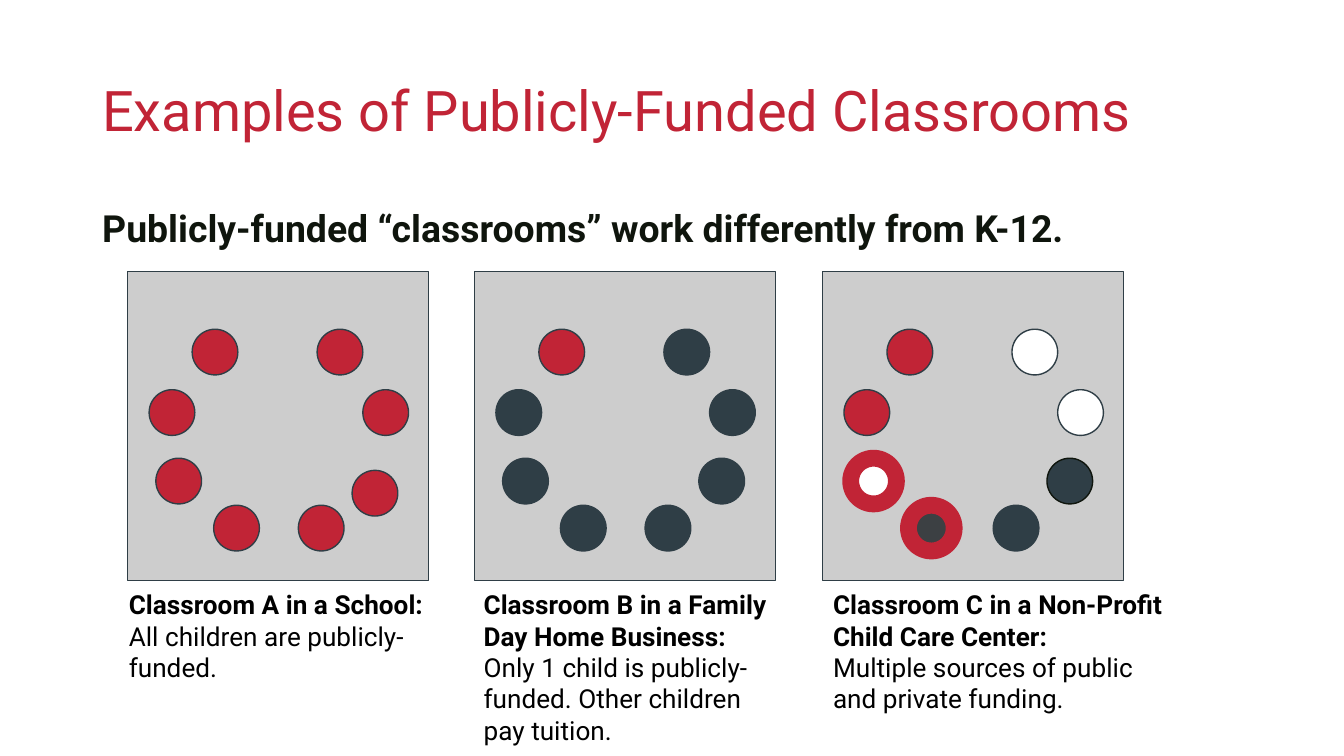
import pptx
import pptx.util
import pptx.dml.color
import pptx.enum.shapes
import pptx.enum.text

Inches = pptx.util.Inches
Pt = pptx.util.Pt

RED, NAVY, WHITE, GRAY = "C12436", "2F3E46", "FFFFFF", "CDCDCD"
CHARCOAL, INK, BLACK = "3C4043", "0F150D", "000000"
ROOM_TOP, ROOM_WIDTH, ROOM_HEIGHT = 2.02, 2.24, 2.3
SEAT_SIZE = 0.34
CAPTION_TOP = 4.28

# Seat offsets from the room corner, clockwise from the upper left.
SEATS = [(0.48, 0.43), (1.41, 0.43), (1.75, 0.88), (1.67, 1.39),
         (1.27, 1.74), (0.64, 1.74), (0.21, 1.39), (0.16, 0.88)]
LOW_RIGHT = 3

# Each child is (fill, line colour, line width).
PUBLIC = (RED, NAVY, 0.75)
TUITION = (NAVY, NAVY, 0.75)
TUITION_DARK_EDGE = (NAVY, INK, 0.75)
OTHER = (WHITE, NAVY, 0.75)
PUBLIC_AND_OTHER = (WHITE, RED, 9)
PUBLIC_AND_TUITION = (CHARCOAL, RED, 9)

# Room left, children, extra drop of the low right seat,
# caption left, width, height, heading and detail.
CLASSROOMS = [
    (0.95, [PUBLIC] * 8, 0.09, 0.86, 2.42, 0.91,
     "Classroom A in a School:", "All children are publicly-funded."),
    (3.53, [PUBLIC] + [TUITION] * 7, 0, 3.5, 2.42, 1.38,
     "Classroom B in a Family Day Home Business:",
     "Only 1 child is publicly-funded. Other children pay tuition."),
    (6.12, [PUBLIC, OTHER, OTHER, TUITION_DARK_EDGE, TUITION,
            PUBLIC_AND_TUITION, PUBLIC_AND_OTHER, PUBLIC], 0, 6.1, 2.8, 1.14,
     "Classroom C in a Non-Profit Child Care Center:",
     "Multiple sources of public and private funding."),
]


def color(hex_value):
    return pptx.dml.color.RGBColor.from_string(hex_value)


def add_outlined(page, kind, left, top, width, height, fill, line, weight):
    shape = page.shapes.add_shape(kind, Inches(left), Inches(top),
                                  Inches(width), Inches(height))
    shape.shadow.inherit = False
    shape.fill.solid()
    shape.fill.fore_color.rgb = color(fill)
    shape.line.color.rgb = color(line)
    shape.line.width = Pt(weight)


def add_text(page, left, top, width, height, lines, size, text_color,
             insets=(0.07, 0.04), middle=False, spacing=None):
    """Add a text box; each of the lines is (text, bold)."""
    box = page.shapes.add_textbox(Inches(left), Inches(top),
                                  Inches(width), Inches(height))
    frame = box.text_frame
    frame.word_wrap = True
    frame.margin_left = frame.margin_right = Inches(insets[0])
    frame.margin_top = frame.margin_bottom = Inches(insets[1])
    if middle:
        frame.vertical_anchor = pptx.enum.text.MSO_ANCHOR.MIDDLE
    for index, (text, bold) in enumerate(lines):
        para = frame.add_paragraph() if index else frame.paragraphs[0]
        para.line_spacing = spacing
        span = para.add_run()
        span.text = text
        span.font.name = "Roboto"
        span.font.size = Pt(size)
        span.font.bold = bold
        span.font.color.rgb = color(text_color)


def add_room(page, left, top, children, low_right_drop):
    kinds = pptx.enum.shapes.MSO_SHAPE
    add_outlined(page, kinds.RECTANGLE, left, top, ROOM_WIDTH, ROOM_HEIGHT,
                 GRAY, NAVY, 0.75)
    for seat, ((across, down), child) in enumerate(zip(SEATS, children)):
        drop = low_right_drop if seat == LOW_RIGHT else 0
        add_outlined(page, kinds.OVAL, left + across, top + down + drop,
                     SEAT_SIZE, SEAT_SIZE, *child)


def add_headings(page, left, width):
    add_text(page, left, 0.3, width, 1.09,
             [("Examples of Publicly-Funded Classrooms", False)],
             30, RED, middle=True, spacing=0.9)
    add_text(page, left, 1.49, width, 3.57,
             [("Publicly-funded “classrooms” work differently from K-12.", True)],
             20, INK)


def main():
    deck = pptx.Presentation()
    deck.slide_width = Inches(10)
    deck.slide_height = deck.slide_width * 9 // 16
    page = deck.slides.add_slide(deck.slide_layouts[6])
    add_headings(page, 0.69, 8.62)
    for (room_left, children, drop, caption_left, width, height,
         heading, detail) in CLASSROOMS:
        add_room(page, room_left, ROOM_TOP, children, drop)
        add_text(page, caption_left, CAPTION_TOP, width, height,
                 [(heading, True), (detail, False)], 14, BLACK,
                 insets=(0.1, 0.1))
    deck.save("out.pptx")


if __name__ == "__main__":
    main()
